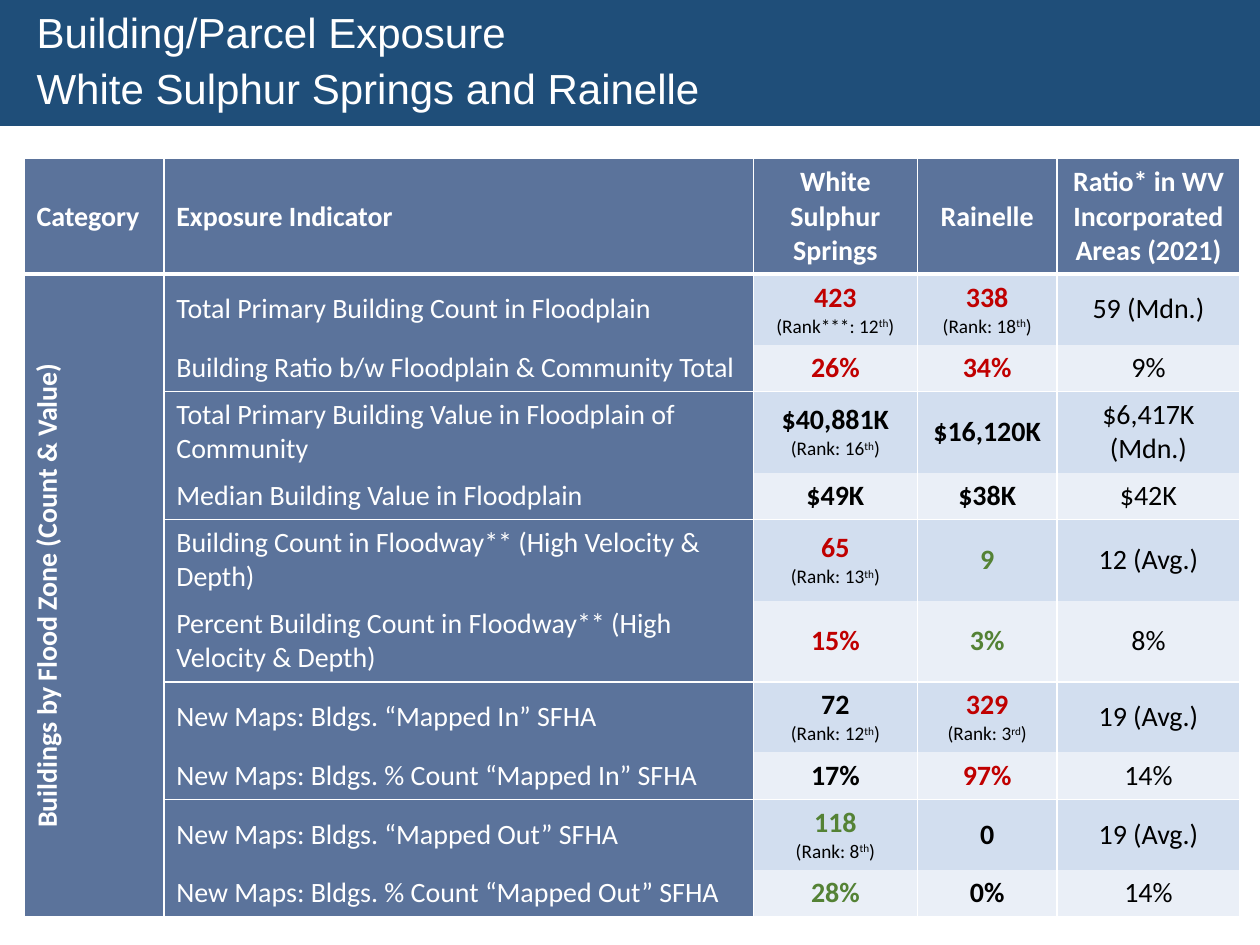
from lxml import etree
from pptx import Presentation
from pptx.dml.color import RGBColor
from pptx.enum.text import MSO_ANCHOR, MSO_AUTO_SIZE, PP_ALIGN
from pptx.oxml.ns import qn
from pptx.util import Inches, Pt

LEFT, CENTER = PP_ALIGN.LEFT, PP_ALIGN.CENTER
MIDDLE = MSO_ANCHOR.MIDDLE
NO_TABLE_STYLE = "{2D5ABB26-0587-4C30-8999-92F81FD0307C}"

THEME = {
    "title_font": "Arial", "table_font": "Calibri",
    "title_size": 24, "body_size": 16, "rank_size": 11,
    "banner": "1F4E79", "heading": "5B739B", "bands": ("D2DEEF", "EAEFF7"),
    "white": "FFFFFF", "black": "000000", "red": "C00000", "green": "548235",
}

# Content
TITLE_LINES = ["Building/Parcel Exposure", "White Sulphur Springs and Rainelle"]
HEADERS = ["Category", "Exposure Indicator", "White Sulphur Springs", "Rainelle",
           "Ratio* in WV Incorporated Areas (2021)"]
CATEGORY = "Buildings by Flood Zone (Count & Value)"
# Indicator, then (value, colour, optional rank and its ordinal) per town, then state ratio
ROWS = [
    ("Total Primary Building Count in Floodplain",
     ("423", "red", "Rank***: 12", "th"), ("338", "red", "Rank: 18", "th"), "59 (Mdn.)"),
    ("Building Ratio b/w Floodplain & Community Total",
     ("26%", "red"), ("34%", "red"), "9%"),
    ("Total Primary Building Value in Floodplain of Community",
     ("$40,881K", "black", "Rank: 16", "th"), ("$16,120K", "black"), "$6,417K (Mdn.)"),
    ("Median Building Value in Floodplain",
     ("$49K", "black"), ("$38K", "black"), "$42K"),
    ("Building Count in Floodway** (High Velocity & Depth)",
     ("65", "red", "Rank: 13", "th"), ("9", "green"), "12 (Avg.)"),
    ("Percent Building Count in Floodway** (High Velocity & Depth)",
     ("15%", "red"), ("3%", "green"), "8%"),
    ("New Maps: Bldgs. “Mapped In” SFHA",
     ("72", "black", "Rank: 12", "th"), ("329", "red", "Rank: 3", "rd"), "19 (Avg.)"),
    ("New Maps: Bldgs. % Count “Mapped In” SFHA",
     ("17%", "black"), ("97%", "red"), "14%"),
    ("New Maps: Bldgs. “Mapped Out” SFHA",
     ("118", "green", "Rank: 8", "th"), ("0", "black"), "19 (Avg.)"),
    ("New Maps: Bldgs. % Count “Mapped Out” SFHA",
     ("28%", "green"), ("0%", "black"), "14%"),
]

# Layout
COLUMN_WIDTHS = [1.11, 4.68, 1.3, 1.11, 1.45]
HEADER_HEIGHT, WRAPPED_HEIGHT, RANKED_HEIGHT, SINGLE_HEIGHT = 0.91, 0.64, 0.56, 0.37
WRAP_LENGTH = 48


def color(name):
    return RGBColor.from_string(THEME.get(name, name))


def add_span(para, text, size, shade, bold=False, font="table_font", raised=False):
    span = para.add_run()
    span.text = text
    span.font.name = THEME[font]
    span.font.size = Pt(THEME[size])
    span.font.bold = bold
    span.font.color.rgb = color(shade)
    if raised:
        span.font._element.set("baseline", "30000")


def style_cell(cell, fill, bottom=0):
    """White side borders, an optional bottom border, and a fill."""
    cell.vertical_anchor = MIDDLE
    properties = cell._tc.get_or_add_tcPr()
    for edge, width in (("lnL", 1), ("lnR", 1), ("lnB", bottom)):
        if width:
            line = etree.SubElement(properties, qn(f"a:{edge}"), w=str(Pt(width)))
            paint = etree.SubElement(line, qn("a:solidFill"))
            etree.SubElement(paint, qn("a:srgbClr"), val=THEME["white"])
    cell.fill.solid()
    cell.fill.fore_color.rgb = color(fill)


def write_cell(cell, text, shade, bold=False, align=LEFT):
    para = cell.text_frame.paragraphs[0]
    para.alignment = align
    add_span(para, text, "body_size", shade, bold)


def write_value(cell, value, shade, rank=None, ordinal=None):
    write_cell(cell, value, shade, True, CENTER)
    if rank:
        para = cell.text_frame.add_paragraph()
        para.alignment = CENTER
        add_span(para, f"({rank}", "rank_size", "black")
        add_span(para, ordinal, "rank_size", "black", raised=True)
        add_span(para, ")", "rank_size", "black")


def row_height(indicator, town):
    if len(indicator) > WRAP_LENGTH:
        return WRAPPED_HEIGHT
    return RANKED_HEIGHT if len(town) > 2 else SINGLE_HEIGHT


def add_title(page):
    title = page.shapes.title
    title.left, title.top, title.width, title.height = 0, 0, Inches(10), Inches(1)
    title.fill.solid()
    title.fill.fore_color.rgb = color("banner")
    frame = title.text_frame
    frame.auto_size = MSO_AUTO_SIZE.NONE
    frame.vertical_anchor = MIDDLE
    frame.margin_left = Inches(0.29)
    for index, text in enumerate(TITLE_LINES):
        para = frame.add_paragraph() if index else frame.paragraphs[0]
        para.alignment = LEFT
        para.line_spacing = 0.9
        para.space_before = Pt(6 if index else 0)
        add_span(para, text, "title_size", "white", font="title_font")


def add_exposure_table(page):
    heights = [HEADER_HEIGHT] + [row_height(row[0], row[1]) for row in ROWS]
    table = page.shapes.add_table(
        len(heights), len(HEADERS), Inches(0.19), Inches(1.26),
        Inches(sum(COLUMN_WIDTHS)), Inches(sum(heights))).table
    table._tbl.tblPr.find(qn("a:tableStyleId")).text = NO_TABLE_STYLE
    for column, width in zip(table.columns, COLUMN_WIDTHS):
        column.width = Inches(width)
    for row, height in zip(table.rows, heights):
        row.height = Inches(height)

    # Header row
    for index, text in enumerate(HEADERS):
        cell = table.cell(0, index)
        style_cell(cell, "heading", bottom=3)
        write_cell(cell, text, "white", True, CENTER if index > 1 else LEFT)

    # Category cell beside all indicators
    category = table.cell(1, 0)
    category.merge(table.cell(len(ROWS), 0))
    style_cell(category, "heading", bottom=1)
    category._tc.get_or_add_tcPr().set("vert", "vert270")
    write_cell(category, CATEGORY, "white", True, CENTER)

    # Indicators come in pairs, each closed by a line
    for index, (indicator, first_town, second_town, ratio) in enumerate(ROWS):
        second = index % 2
        cells = [table.cell(index + 1, column) for column in range(1, len(HEADERS))]
        for cell, fill in zip(cells, ["heading"] + [THEME["bands"][second]] * 3):
            style_cell(cell, fill, bottom=second)
        write_cell(cells[0], indicator, "white")
        write_value(cells[1], *first_town)
        write_value(cells[2], *second_town)
        write_cell(cells[3], ratio, "black", align=CENTER)


def main():
    deck = Presentation()
    deck.slide_width, deck.slide_height = Inches(10), Inches(7.5)
    page = deck.slides.add_slide(deck.slide_layouts[5])
    add_title(page)
    add_exposure_table(page)
    deck.save("out.pptx")


if __name__ == "__main__":
    main()
